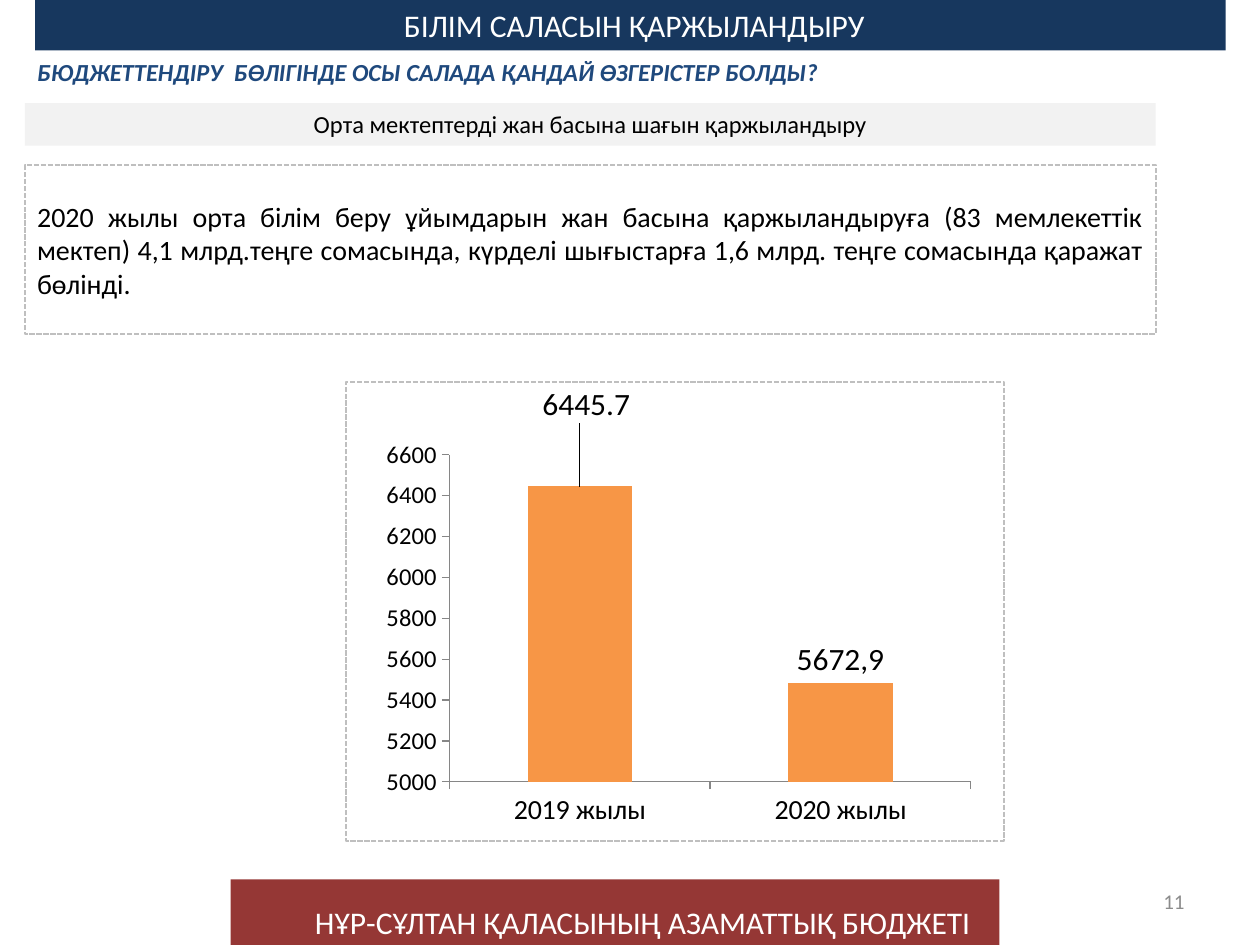
from pptx import Presentation
from pptx.chart.data import CategoryChartData
from pptx.dml.color import RGBColor
from pptx.enum.chart import XL_CHART_TYPE, XL_LABEL_POSITION, XL_TICK_MARK
from pptx.enum.dml import MSO_LINE
from pptx.enum.shapes import MSO_SHAPE
from pptx.enum.text import MSO_ANCHOR, MSO_AUTO_SIZE, PP_ALIGN
from pptx.oxml import parse_xml
from pptx.oxml.ns import nsdecls
from pptx.util import Cm, Pt

RECTANGLE = MSO_SHAPE.RECTANGLE
COLUMNS = XL_CHART_TYPE.COLUMN_CLUSTERED
OUTSIDE_END = XL_LABEL_POSITION.OUTSIDE_END
TICK_OUT, TICK_NONE = XL_TICK_MARK.OUTSIDE, XL_TICK_MARK.NONE
SHORT_DASH = MSO_LINE.SQUARE_DOT
TOP, MIDDLE = MSO_ANCHOR.TOP, MSO_ANCHOR.MIDDLE
LEFT, CENTER, RIGHT, JUSTIFY = PP_ALIGN.LEFT, PP_ALIGN.CENTER, PP_ALIGN.RIGHT, PP_ALIGN.JUSTIFY
NO_FIT = MSO_AUTO_SIZE.NONE

FONT = "Calibri"
COLORS = {
    "navy": "17375E", "blue": "1F497D", "red": "953735", "orange": "F79646",
    "pale": "F2F2F2", "dash": "BFBFBF", "axis": "868686", "number": "8C8C8C",
    "white": "FFFFFF", "black": "000000",
}

TITLE = "БІЛІМ САЛАСЫН ҚАРЖЫЛАНДЫРУ"
QUESTION = "БЮДЖЕТТЕНДІРУ  БӨЛІГІНДЕ ОСЫ САЛАДА ҚАНДАЙ ӨЗГЕРІСТЕР БОЛДЫ?"
SUBJECT = "Орта мектептерді жан басына шағын қаржыландыру"
DETAILS = (
    "2020 жылы орта білім беру ұйымдарын жан басына қаржыландыруға "
    "(83 мемлекеттік мектеп) 4,1 млрд.теңге сомасында, күрделі шығыстарға "
    "1,6 млрд. теңге сомасында қаражат бөлінді."
)
FOOTER = "НҰР-СҰЛТАН ҚАЛАСЫНЫҢ АЗАМАТТЫҚ БЮДЖЕТІ"
NUMBER = "11"
YEARS = ("2019 жылы", "2020 жылы")
FUNDING = (6445.7, 5483.1)
FUNDING_2020_LABEL = "5672,9"

MARGIN, CONTENT_WIDTH, LINE_HEIGHT = 0.5, 22.8, 1.02
TITLE_BOX = (2.59, 0, 20.4, LINE_HEIGHT)
CHART_BOX = (6.93, 7.77, 13.31, 9.17)
BOXES = [
    {"box": (4.65, 17.73, 15.5, 1.37), "fill": "red"},
    {"box": (0.71, 0, 24, LINE_HEIGHT), "fill": "navy"},
    {"box": (6.98, 7.7, 13.26, 9.25), "line": "dash"},
    {"box": (MARGIN, 2.08, CONTENT_WIDTH, 0.86), "fill": "pale",
     "text": (SUBJECT, 14, "black", CENTER, TOP)},
    {"box": (MARGIN, 3.33, CONTENT_WIDTH, 3.4), "line": "dash",
     "text": (DETAILS, 16, "black", JUSTIFY, MIDDLE)},
]
LABELS = [
    ((6.1, 18.08, 17.2, LINE_HEIGHT), (FOOTER, 18, "white", JUSTIFY, TOP), {}),
    ((18.21, 17.65, 5.92, LINE_HEIGHT), (NUMBER, 12, "number", RIGHT, MIDDLE), {}),
    ((MARGIN, LINE_HEIGHT, 20.4, 0.86), (QUESTION, 14, "blue", LEFT, TOP),
     {"bold": True, "italic": True}),
]


def assign(target, values):
    for attribute, value in values.items():
        setattr(target, attribute, value)


def rgb(color):
    return RGBColor.from_string(COLORS[color])


def cm(box):
    return [Cm(length) for length in box]


def style_font(font, size, color="black", **extras):
    assign(font, {"name": FONT, "size": Pt(size), **extras})
    font.color.rgb = rgb(color)


def write(shape, wording, size, color, align, anchor, **extras):
    frame = shape.text_frame
    assign(frame, {"word_wrap": True, "auto_size": NO_FIT, "vertical_anchor": anchor})
    paragraph = frame.paragraphs[0]
    paragraph.alignment = align
    run = paragraph.add_run()
    run.text = wording
    style_font(run.font, size, color, **extras)


def paint(format_part, color):
    format_part.solid()
    format_part.fore_color.rgb = rgb(color)


def add_box(slide, box, fill=None, line=None, text=None):
    shape = slide.shapes.add_shape(RECTANGLE, *cm(box))
    shape.shadow.inherit = False
    if fill:
        paint(shape.fill, fill)
    else:
        shape.fill.background()
    if line:
        shape.line.color.rgb = rgb(line)
        assign(shape.line, {"width": Pt(1), "dash_style": SHORT_DASH})
    else:
        shape.line.fill.background()
    if text:
        write(shape, *text)


def manual_layout(target="", **places):
    parts = "".join(f'<c:{key} val="{value}"/>' for key, value in places.items())
    return parse_xml(
        f'<c:layout {nsdecls("c")}><c:manualLayout>{target}{parts}</c:manualLayout></c:layout>'
    )


def add_funding_chart(slide):
    funding = CategoryChartData(number_format="General")
    funding.categories = YEARS
    funding.add_series("Series 1", FUNDING)
    chart = slide.shapes.add_chart(COLUMNS, *cm(CHART_BOX), funding).chart
    assign(chart, {"has_title": False, "has_legend": False})
    style_font(chart.font, 18)

    plot = chart.plots[0]
    assign(plot, {"gap_width": 150, "vary_by_categories": False})
    series = plot.series[0]
    paint(series.format.fill, "orange")

    assign(chart.value_axis, {"minimum_scale": 5000, "maximum_scale": 6600, "major_unit": 200})
    for axis, size in ((chart.category_axis, 16), (chart.value_axis, 14)):
        assign(axis, {"has_major_gridlines": False, "major_tick_mark": TICK_OUT,
                      "minor_tick_mark": TICK_NONE})
        style_font(axis.tick_labels.font, size)
        axis.format.line.color.rgb = rgb("axis")

    assign(series.data_labels, {"show_value": True, "position": OUTSIDE_END})
    style_font(series.data_labels.font, 18)
    label_2019, label_2020 = (series.points[i].data_label for i in range(len(YEARS)))
    style_font(label_2019.font, 18)
    label_2020_run = label_2020.text_frame.paragraphs[0].add_run()
    label_2020_run.text = FUNDING_2020_LABEL
    style_font(label_2020_run.font, 18)
    for label in (label_2019, label_2020):
        label.position = OUTSIDE_END

    chart.element.xpath(".//c:dLbl/c:idx")[0].addnext(manual_layout(x=0.01, y=-0.13))
    plot_area = chart.element.xpath(".//c:plotArea")[0]
    for layout in plot_area.xpath("c:layout"):
        plot_area.remove(layout)
    plot_area.insert(0, manual_layout(
        '<c:layoutTarget val="inner"/>', xMode="edge", yMode="edge",
        x=0.16, y=0.14, w=0.79, h=0.73))


def main():
    """Build the education funding slide."""
    deck = Presentation()
    assign(deck, {"slide_width": Cm(25.4), "slide_height": Cm(19.05)})
    slide = deck.slides.add_slide(deck.slide_layouts[5])
    add_funding_chart(slide)
    for box in BOXES:
        add_box(slide, **box)

    title = slide.shapes.title
    assign(title, dict(zip(("left", "top", "width", "height"), cm(TITLE_BOX))))
    write(title, TITLE, 18, "white", CENTER, TOP)
    title.element.getparent().append(title.element)

    for box, text, extras in LABELS:
        write(slide.shapes.add_textbox(*cm(box)), *text, **extras)
    deck.save("out.pptx")


if __name__ == "__main__":
    main()
